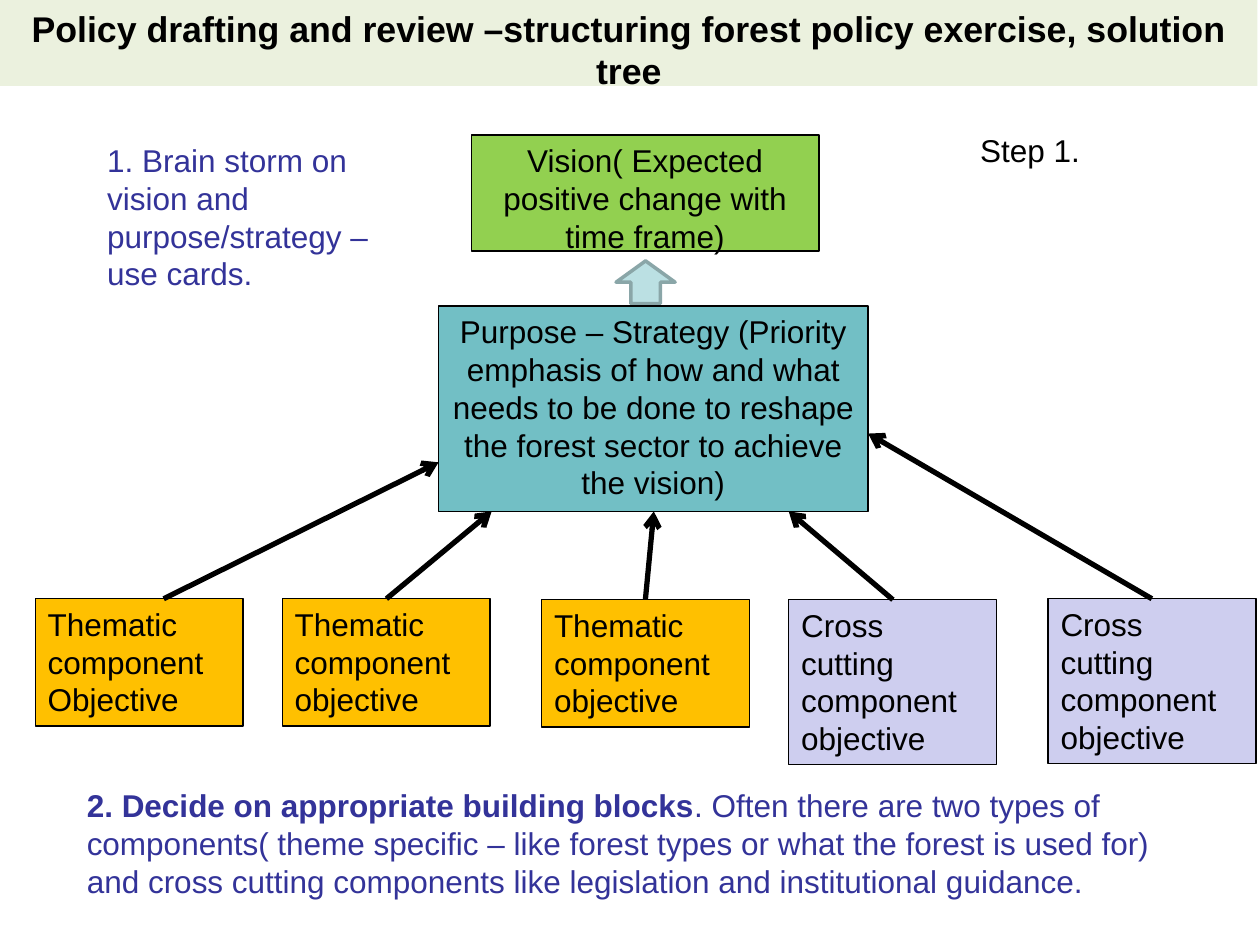
from lxml import etree
from pptx import Presentation
from pptx.dml.color import RGBColor
from pptx.enum.shapes import MSO_CONNECTOR, MSO_SHAPE
from pptx.enum.text import MSO_ANCHOR, PP_ALIGN
from pptx.oxml.ns import qn
from pptx.util import Cm, Pt

RECT, UP_ARROW = MSO_SHAPE.RECTANGLE, MSO_SHAPE.UP_ARROW
STRAIGHT = MSO_CONNECTOR.STRAIGHT
TOP = MSO_ANCHOR.TOP
LEFT, CENTER = PP_ALIGN.LEFT, PP_ALIGN.CENTER

BLACK = RGBColor(0x00, 0x00, 0x00)
INDIGO = RGBColor(0x33, 0x33, 0x99)
PALE_GREEN = RGBColor(0xEB, 0xF1, 0xDE)
GREEN = RGBColor(0x92, 0xD0, 0x50)
TEAL = RGBColor(0x72, 0xBF, 0xC5)
PALE_TEAL = RGBColor(0xBB, 0xE0, 0xE3)
GREY_TEAL = RGBColor(0x8A, 0xA6, 0xA8)
AMBER = RGBColor(0xFF, 0xC0, 0x00)
LAVENDER = RGBColor(0xCE, 0xCE, 0xEF)

BOX_W = 4.19
CROSS_CUTTING = "Cross cutting component objective"
# left, top, height, fill, text, arrow start x, arrow end
COMPONENTS = [
    (0.71, 12.07, 2.57, AMBER, "Thematic component\nObjective", 3.3, (8.84, 9.32)),
    (5.69, 12.07, 2.57, AMBER, "Thematic component objective", 7.79, (9.91, 10.31)),
    (10.92, 12.09, 2.57, AMBER, "Thematic component\nobjective", 13.01, (13.18, 10.31)),
    (15.9, 12.09, 3.33, LAVENDER, CROSS_CUTTING, 18, (15.9, 10.31)),
    (21.13, 12.07, 3.33, LAVENDER, CROSS_CUTTING, 23.22, (17.5, 8.74)),
]


def format_text(tf, color=BLACK, align=LEFT, size=18, bold=False):
    tf.word_wrap = True
    tf.vertical_anchor = TOP
    for p in tf.paragraphs:
        p.alignment = align
        for r in p.runs:
            r.font.name = "Arial"
            r.font.size = Pt(size)
            r.font.bold = bold
            r.font.color.rgb = color


def add_title(s, text):
    title = s.shapes.title
    title.left, title.top, title.width, title.height = Cm(0), Cm(0), Cm(25.35), Cm(1.73)
    title.fill.solid()
    title.fill.fore_color.rgb = PALE_GREEN
    title.text_frame.text = text
    format_text(title.text_frame, align=CENTER, size=20.4, bold=True)


def add_box(s, at, fill, text="", align=CENTER, kind=RECT, line=BLACK, width=0.75):
    sp = s.shapes.add_shape(kind, *map(Cm, at))
    sp.shadow.inherit = False
    sp.fill.solid()
    sp.fill.fore_color.rgb = fill
    sp.line.color.rgb = line
    sp.line.width = Pt(width)
    if text:
        sp.text_frame.text = text
        format_text(sp.text_frame, align=align)


def add_arrow(s, start, end):
    c = s.shapes.add_connector(STRAIGHT, *map(Cm, start + end))
    c.line.color.rgb = BLACK
    c.line.width = Pt(3)
    sp_pr = c._element.spPr
    etree.SubElement(sp_pr.find(qn("a:ln")), qn("a:tailEnd"), type="arrow")
    etree.SubElement(sp_pr, qn("a:effectLst"))


def add_note(s, at, text, color=BLACK, lead=""):
    tf = s.shapes.add_textbox(*map(Cm, at)).text_frame
    p = tf.paragraphs[0]
    if lead:
        p.add_run().text = lead
    p.add_run().text = text
    format_text(tf, color)
    if lead:
        p.runs[0].font.bold = True


def main():
    prs = Presentation()
    prs.slide_width, prs.slide_height = Cm(25.4), Cm(19.05)
    s = prs.slides.add_slide(prs.slide_layouts[5])

    add_title(s, "Policy drafting and review –structuring forest policy exercise, solution tree")

    # Vision and purpose
    add_box(s, (9.5, 2.72, 7.01, 2.34), GREEN,
            "Vision( Expected positive change with time frame)")
    add_box(s, (12.42, 5.26, 1.19, 0.86), PALE_TEAL,
            kind=UP_ARROW, line=GREY_TEAL, width=2)
    add_box(s, (8.84, 6.17, 8.66, 4.14), TEAL,
            "Purpose – Strategy (Priority emphasis of how and what needs to be done "
            "to reshape the forest sector to achieve the vision)")

    # Components leading up to the purpose
    for left, top, height, fill, text, start_x, end in COMPONENTS:
        add_box(s, (left, top, BOX_W, height), fill, text, LEFT)
        add_arrow(s, (start_x, top), end)

    # Instructions
    add_note(s, (1.91, 2.72, 6.6, 3.33),
             "1. Brain storm on vision and purpose/strategy – use cards.", INDIGO)
    add_note(s, (19.51, 2.51, 4.6, 1.02), "Step 1.")
    add_note(s, (1.5, 15.72, 22.61, 2.57),
             ". Often there are two types of components( theme specific – like forest "
             "types or what the forest is used for) and cross cutting components like "
             "legislation and institutional guidance.",
             INDIGO, lead="2. Decide on appropriate building blocks")

    prs.save("out.pptx")


if __name__ == "__main__":
    main()
